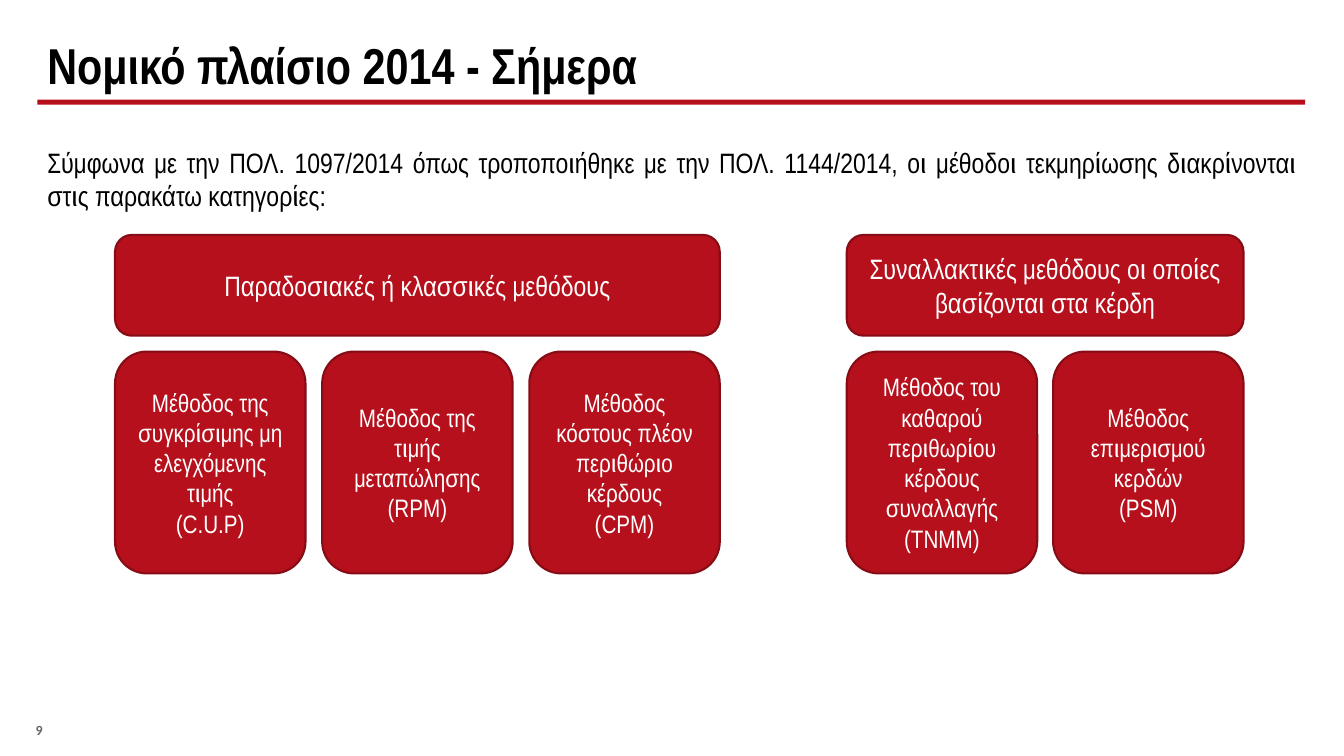
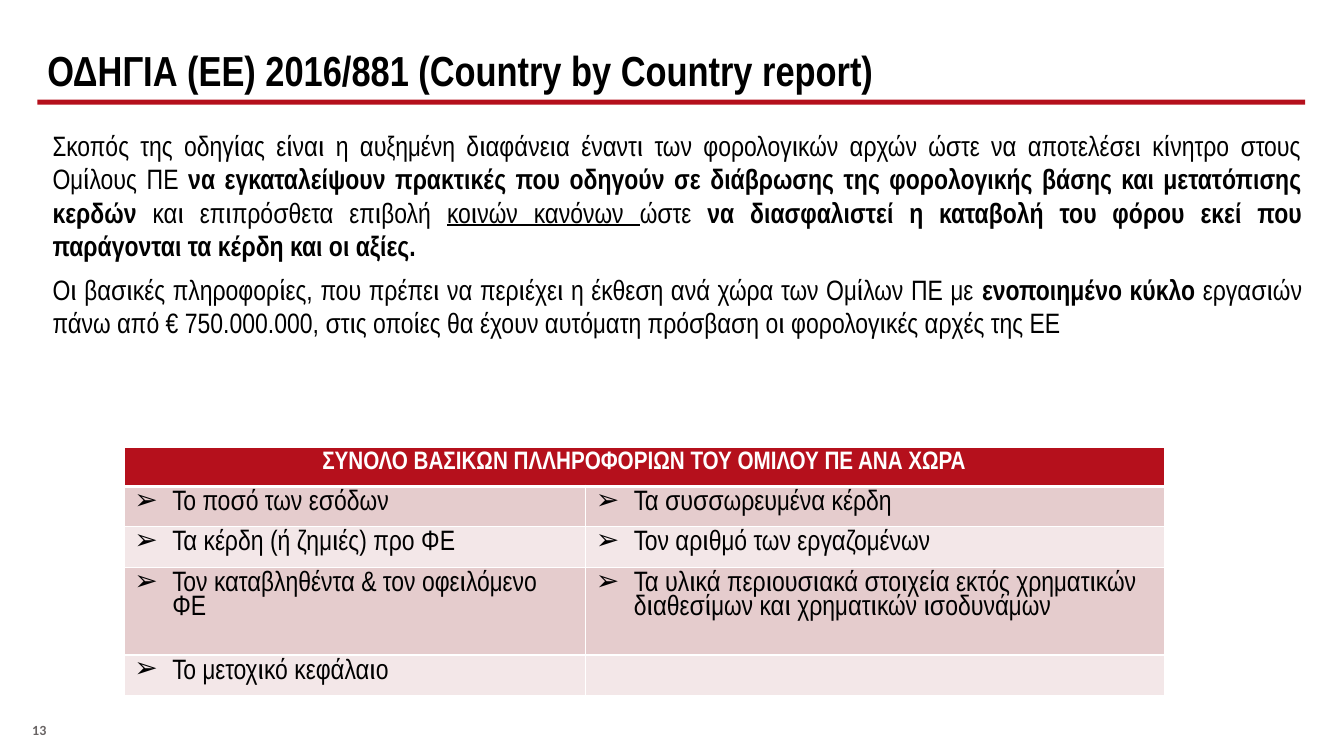
from lxml import etree
from pptx import Presentation
from pptx.dml.color import RGBColor
from pptx.enum import shapes, text
from pptx.oxml.ns import qn
from pptx.util import Cm, Pt

RED = RGBColor(0xB5, 0x10, 0x1C)
DARK_RED = RGBColor(0x86, 0x0C, 0x15)
ROSE = RGBColor(0xE5, 0xCC, 0xCD)
PALE_ROSE = RGBColor(0xF3, 0xE7, 0xE8)
GREY = RGBColor(0x69, 0x64, 0x64)
BLACK = RGBColor(0, 0, 0)
WHITE = RGBColor(0xFF, 0xFF, 0xFF)

FONT = "Arial Narrow"
NUMBER_FONT = "Calibri"
PLAIN, BOLD, UNDERLINED = "plain", "bold", "underlined"

HEADING_TOP, HEADING_HEIGHT = 5.92, 2.54
METHOD_TOP, METHOD_WIDTH, METHOD_HEIGHT = 8.86, 4.8, 5.59
BULLET_INDENT = Cm(0.96)
TABLE_LINE_SPACING = 0.9

INTRODUCTION = [
    [("Σύμφωνα με την ΠΟΛ. 1097/2014 όπως τροποποιήθηκε με την ΠΟΛ. 1144/2014, "
      "οι μέθοδοι τεκμηρίωσης διακρίνονται στις παρακάτω κατηγορίες:", PLAIN)],
]

# Heading, left edge and width in cm, methods below it
METHOD_GROUPS = [
    ("Παραδοσιακές ή κλασσικές μεθόδους", 2.9, 15.24, [
        ("Μέθοδος της συγκρίσιμης μη ελεγχόμενης τιμής", "(C.U.P)"),
        ("Μέθοδος της τιμής μεταπώλησης", "(RPM)"),
        ("Μέθοδος κόστους πλέον περιθώριο κέρδους", "(CPM)"),
    ]),
    ("Συναλλακτικές μεθόδους οι οποίες βασίζονται στα κέρδη", 21.34, 10, [
        ("Μέθοδος του καθαρού περιθωρίου κέρδους συναλλαγής", "(TNMM)"),
        ("Μέθοδος επιμερισμού κερδών", "(PSM)"),
    ]),
]

DIRECTIVE = [
    [("Σκοπός της οδηγίας είναι η αυξημένη διαφάνεια έναντι των φορολογικών αρχών "
      "ώστε να αποτελέσει κίνητρο στους Ομίλους ΠΕ ", PLAIN),
     ("να εγκαταλείψουν πρακτικές που οδηγούν σε διάβρωσης της φορολογικής βάσης "
      "και μετατόπισης κερδών", BOLD),
     (" και επιπρόσθετα επιβολή ", PLAIN),
     ("κοινών κανόνων ", UNDERLINED),
     ("ώστε ", PLAIN),
     ("να διασφαλιστεί η καταβολή του φόρου εκεί που παράγονται τα κέρδη και οι αξίες.",
      BOLD)],
    [("Οι βασικές πληροφορίες, που πρέπει να περιέχει η έκθεση ανά χώρα των Ομίλων ΠΕ με ",
      PLAIN),
     ("ενοποιημένο κύκλο ", BOLD),
     ("εργασιών πάνω από € 750.000.000, στις οποίες θα έχουν αυτόματη πρόσβαση "
      "οι φορολογικές αρχές της ΕΕ", PLAIN)],
]

TABLE_HEADING = "ΣΥΝΟΛΟ ΒΑΣΙΚΩΝ ΠΛΛΗΡΟΦΟΡΙΩΝ ΤΟΥ ΟΜΙΛΟΥ ΠΕ ΑΝΑ ΧΩΡΑ"
TABLE_ROWS = [
    ("Το ποσό των εσόδων", "Τα συσσωρευμένα κέρδη"),
    ("Τα κέρδη (ή ζημιές) προ ΦΕ", "Τον αριθμό των εργαζομένων"),
    ("Τον καταβληθέντα & τον οφειλόμενο ΦΕ",
     "Τα υλικά περιουσιακά στοιχεία εκτός χρηματικών διαθεσίμων "
     "και χρηματικών ισοδυνάμων"),
    ("Το μετοχικό κεφάλαιο", ""),
]
COLUMN_WIDTHS = [11.63, 14.58]
ROW_HEIGHTS = [0.99, 0.99, 0.99, 2.21, 0.99]


def place(shape, left, top, width, height):
    shape.left, shape.top = Cm(left), Cm(top)
    shape.width, shape.height = Cm(width), Cm(height)


def add_run(paragraph, words, size, color=BLACK, style=PLAIN, font=FONT):
    run = paragraph.add_run()
    run.text = words
    run.font.name = font
    run.font.size = Pt(size)
    run.font.color.rgb = color
    run.font.bold = style == BOLD
    run.font.underline = style == UNDERLINED


def set_bullet(paragraph, character=None):
    """Hang the paragraph on a bullet, or remove the inherited one."""
    properties = paragraph._p.get_or_add_pPr()
    indent = BULLET_INDENT if character else 0
    properties.set("marL", str(indent))
    properties.set("indent", str(-indent))
    if character:
        etree.SubElement(properties, qn("a:buFont")).set("typeface", FONT)
        etree.SubElement(properties, qn("a:buChar")).set("char", character)
    else:
        etree.SubElement(properties, qn("a:buNone"))


def next_paragraph(frame, index):
    return frame.add_paragraph() if index else frame.paragraphs[0]


def add_slide(presentation, title, title_size, number):
    slide = presentation.slides.add_slide(presentation.slide_layouts[1])
    heading = slide.shapes.title
    place(heading, 0.94, 1.27, 32, 1.24)
    frame = heading.text_frame
    frame.auto_size = text.MSO_AUTO_SIZE.NONE
    frame.vertical_anchor = text.MSO_ANCHOR.BOTTOM
    frame.paragraphs[0].alignment = text.PP_ALIGN.LEFT
    add_run(frame.paragraphs[0], title, title_size, style=BOLD)

    number_box = slide.shapes.add_textbox(0, Cm(17.86), Cm(1.98), Cm(1.07))
    frame = number_box.text_frame
    frame.word_wrap = True
    frame.vertical_anchor = text.MSO_ANCHOR.MIDDLE
    frame.paragraphs[0].alignment = text.PP_ALIGN.CENTER
    add_run(frame.paragraphs[0], number, 10, GREY, BOLD, NUMBER_FONT)
    return slide


def add_layout_band(slide):
    """Put the red rule under the title on the layout that the slides share."""
    band = slide.shapes.add_shape(shapes.MSO_SHAPE.RECTANGLE, 0, 0, 0, 0)
    place(band, 0.94, 2.51, 31.95, 0.13)
    band.shadow.inherit = False
    band.fill.solid()
    band.fill.fore_color.rgb = RED
    band.line.fill.background()
    band.element.nvSpPr.cNvPr.set("id", "20")
    slide.slide_layout.shapes.element.insert(2, band.element)


def fill_body(slide, paragraphs, left, top, height):
    body = slide.placeholders[1]
    place(body, left, top, 32, height)
    frame = body.text_frame
    frame.auto_size = text.MSO_AUTO_SIZE.NONE
    for index, runs in enumerate(paragraphs):
        paragraph = next_paragraph(frame, index)
        set_bullet(paragraph)
        paragraph.alignment = text.PP_ALIGN.JUSTIFY
        paragraph.space_before = Pt(7 if index else 0)
        for words, style in runs:
            add_run(paragraph, words, 20, style=style)


def add_box(slide, left, top, width, height, lines, size):
    box = slide.shapes.add_shape(shapes.MSO_SHAPE.ROUNDED_RECTANGLE,
                                 Cm(left), Cm(top), Cm(width), Cm(height))
    box.shadow.inherit = False
    box.fill.solid()
    box.fill.fore_color.rgb = RED
    box.line.color.rgb = DARK_RED
    box.line.width = Pt(1.5)
    frame = box.text_frame
    frame.word_wrap = True
    frame.vertical_anchor = text.MSO_ANCHOR.MIDDLE
    for index, line in enumerate(lines):
        paragraph = next_paragraph(frame, index)
        paragraph.alignment = text.PP_ALIGN.CENTER
        add_run(paragraph, line, size, WHITE)


def add_method_group(slide, heading, left, width, methods):
    """Draw a heading box with its methods spread evenly below it."""
    add_box(slide, left, HEADING_TOP, width, HEADING_HEIGHT, [heading], 20)
    step = (width - METHOD_WIDTH) / (len(methods) - 1)
    for index, lines in enumerate(methods):
        add_box(slide, left + index * step, METHOD_TOP, METHOD_WIDTH, METHOD_HEIGHT,
                lines, 18)


def format_cell(cell, fill, top_width=1, bottom_width=1):
    """Give the cell white borders and a plain fill."""
    properties = cell._tc.get_or_add_tcPr()
    widths = {"a:lnL": 1, "a:lnR": 1, "a:lnT": top_width, "a:lnB": bottom_width}
    for tag, width in widths.items():
        border = etree.SubElement(properties, qn(tag), w=str(Pt(width)))
        color = etree.SubElement(etree.SubElement(border, qn("a:solidFill")),
                                 qn("a:srgbClr"))
        color.set("val", str(WHITE))
    cell.fill.solid()
    cell.fill.fore_color.rgb = fill


def add_information_table(slide):
    table = slide.shapes.add_table(len(ROW_HEIGHTS), len(COLUMN_WIDTHS),
                                   Cm(3.13), Cm(11.27), Cm(sum(COLUMN_WIDTHS)),
                                   Cm(sum(ROW_HEIGHTS))).table
    for column, width in zip(table.columns, COLUMN_WIDTHS):
        column.width = Cm(width)
    for row, height in zip(table.rows, ROW_HEIGHTS):
        row.height = Cm(height)

    heading = table.cell(0, 0)
    heading.merge(table.cell(0, 1))
    for cell in table.rows[0].cells:
        format_cell(cell, RED, bottom_width=3)
    paragraph = heading.text_frame.paragraphs[0]
    paragraph.alignment = text.PP_ALIGN.CENTER
    paragraph.line_spacing = TABLE_LINE_SPACING
    add_run(paragraph, TABLE_HEADING, 18, WHITE, BOLD)

    for row_index, row in enumerate(TABLE_ROWS, start=1):
        for column_index, words in enumerate(row):
            cell = table.cell(row_index, column_index)
            format_cell(cell, ROSE if row_index % 2 else PALE_ROSE,
                        top_width=3 if row_index == 1 else 1)
            paragraph = cell.text_frame.paragraphs[0]
            if words:
                set_bullet(paragraph, "➢")
                add_run(paragraph, words, 20)
            paragraph.line_spacing = TABLE_LINE_SPACING


def main():
    presentation = Presentation()
    presentation.slide_width, presentation.slide_height = Cm(33.87), Cm(19.05)

    methods_slide = add_slide(presentation, "Νομικό πλαίσιο 2014 - Σήμερα", 36, "9")
    add_layout_band(methods_slide)
    fill_body(methods_slide, INTRODUCTION, 0.94, 3.53, 2.2)
    for group in METHOD_GROUPS:
        add_method_group(methods_slide, *group)

    directive_slide = add_slide(
        presentation, "ΟΔΗΓΙΑ (ΕΕ) 2016/881 (Country by Country report)", 30, "13")
    fill_body(directive_slide, DIRECTIVE, 1.07, 3.1, 6)
    add_information_table(directive_slide)

    presentation.save("out.pptx")


if __name__ == "__main__":
    main()
